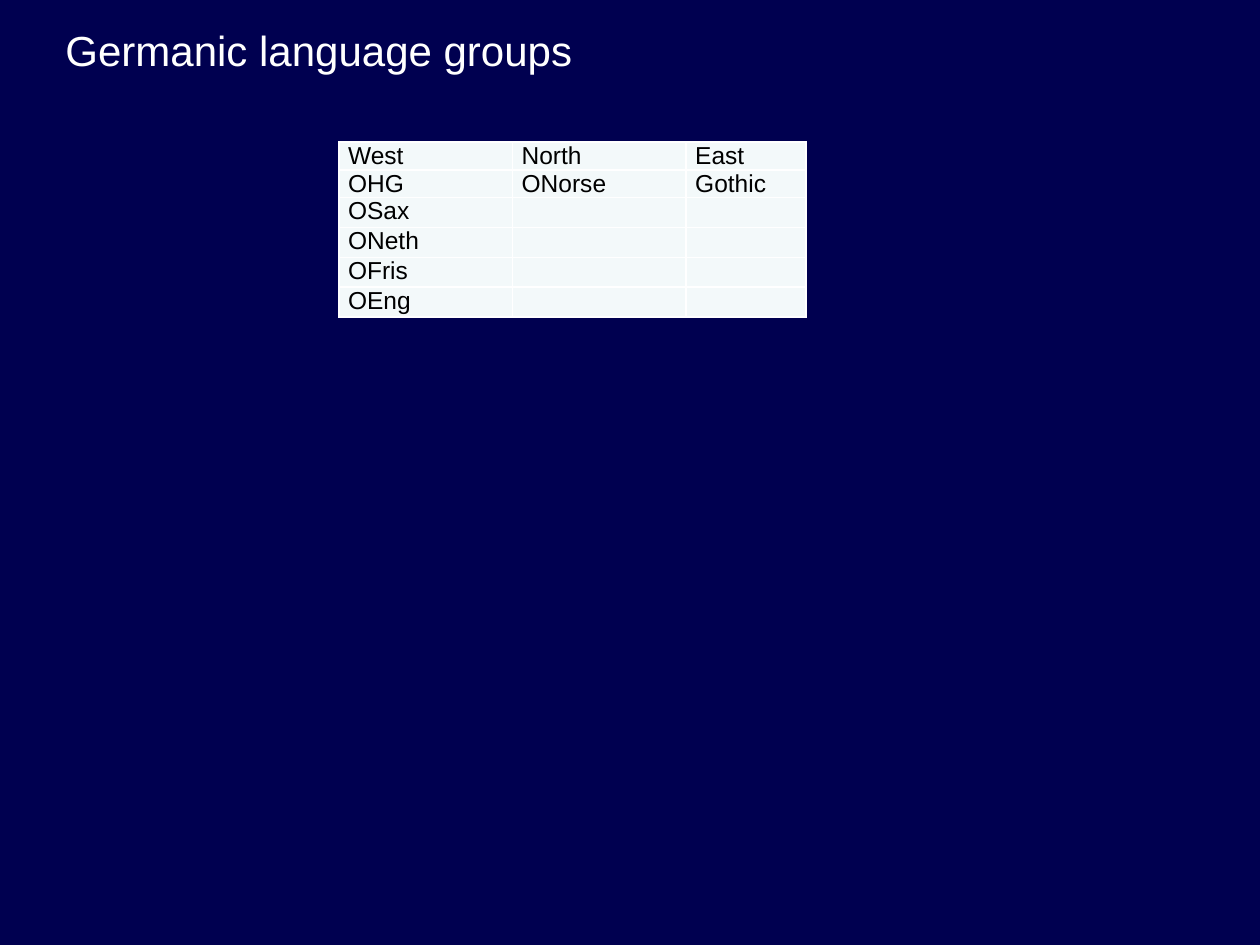
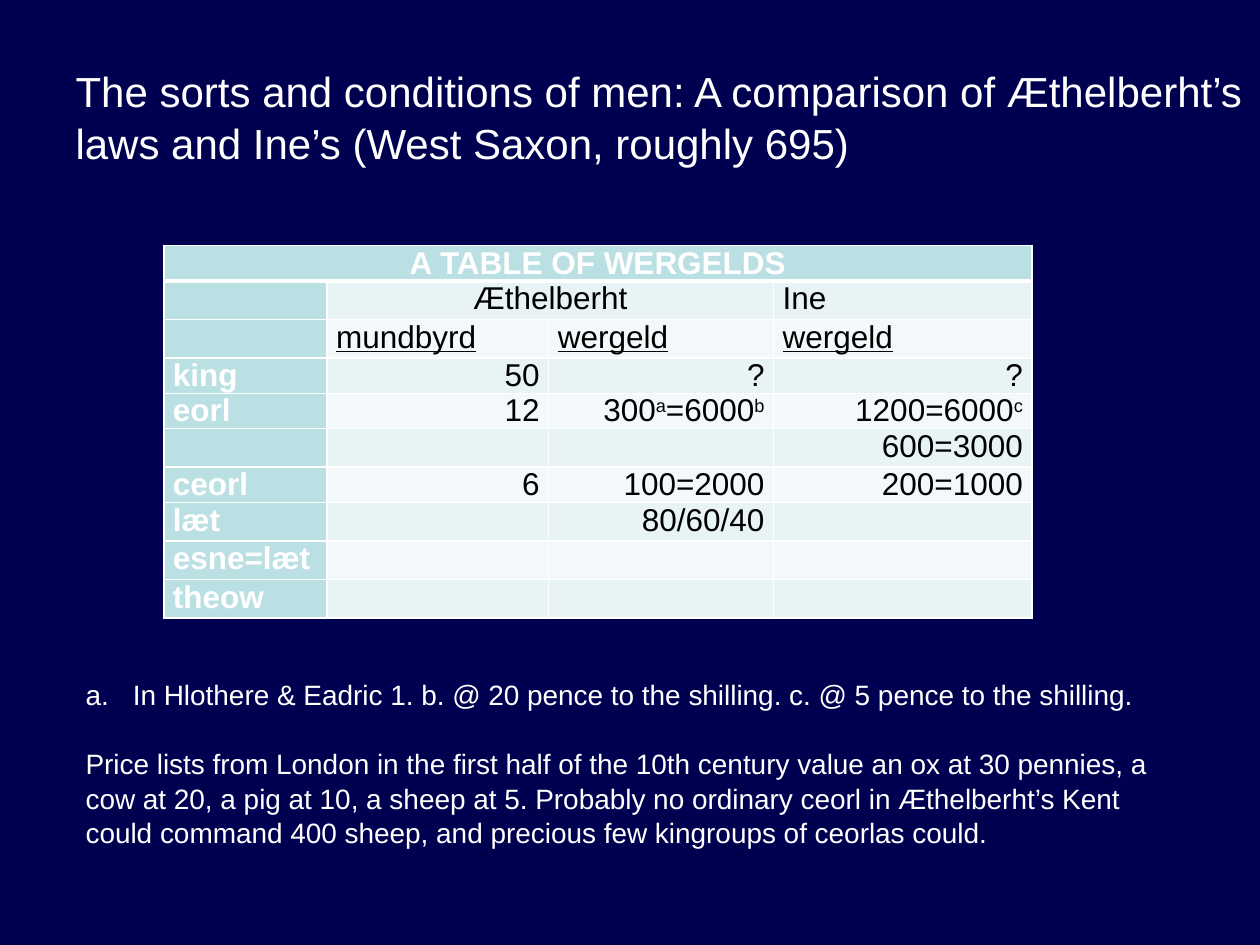
import pptx
import pptx.dml.color
import pptx.enum.text
import pptx.oxml.ns
import pptx.util
from lxml import etree

Pt = pptx.util.Pt
ALIGN = pptx.enum.text.PP_ALIGN

NAVY = "000050"
WHITE = "FFFFFF"
BLACK = "000000"
TEAL = "BBE0E3"
BAND = "E7F3F4"
PALE = "F3F9FA"
LINE_SPACING = 1.04

GROUPS = [
    ["West", "North", "East"],
    ["OHG", "ONorse", "Gothic"],
    ["OSax", "", ""],
    ["ONeth", "", ""],
    ["OFris", "", ""],
    ["OEng", "", ""],
]
WERGELDS = [
    ["A TABLE OF WERGELDS", "", "", ""],
    ["", "Æthelberht", "", "Ine"],
    ["", "mundbyrd", "wergeld", "wergeld"],
    ["king", "50", "?", "?"],
    ["eorl", "12", "300^a=6000^b", "1200=6000^c"],
    ["", "", "", "600=3000"],
    ["ceorl", "6", "100=2000", "200=1000"],
    ["læt", "", "80/60/40", ""],
    ["esne=læt", "", "", ""],
    ["theow", "", "", ""],
]


def rgb(value):
    return pptx.dml.color.RGBColor.from_string(value)


def write(p, text, size=16, color=WHITE, bold=False, underline=False,
          align=ALIGN.LEFT, before=0, after=0, spacing=1.0):
    p.alignment = align
    p.space_before, p.space_after = Pt(before), Pt(after)
    p.line_spacing = spacing
    if not text:
        p._p.get_or_add_endParaRPr().set("sz", str(size * 100))
        return

    def add_run(part, raised=False):
        if not part:
            return
        r = p.add_run()
        r.text = part
        r.font.name, r.font.size = "Arial", Pt(size)
        r.font.bold, r.font.underline = bold, underline
        r.font.color.rgb = rgb(color)
        if raised:
            r.font._element.set("baseline", "30000")

    plain, *marked = text.split("^")
    add_run(plain)
    for part in marked:
        add_run(part[0], raised=True)
        add_run(part[1:])


def set_border(cell, side, width):
    tc_pr = cell._tc.get_or_add_tcPr()
    ln = etree.SubElement(tc_pr, pptx.oxml.ns.qn("a:ln" + side), w=str(Pt(width)))
    fill = etree.SubElement(ln, pptx.oxml.ns.qn("a:solidFill"))
    etree.SubElement(fill, pptx.oxml.ns.qn("a:srgbClr"), val=WHITE)


def group_style(row, col):
    return PALE, {"color": BLACK}


def wergeld_style(row, col):
    if row == 0:
        return TEAL, {"bold": True, "align": ALIGN.CENTER}
    if col == 0:
        return TEAL, {"bold": True}
    align = ALIGN.RIGHT if row > 2 else ALIGN.LEFT
    if (row, col) == (1, 1):
        align = ALIGN.CENTER
    return (BAND if row % 2 else PALE), {
        "color": BLACK, "underline": row == 2, "align": align}


class Deck:
    """Holds the deck style and the slide being filled."""

    def __init__(self):
        self.prs = pptx.Presentation()
        self.prs.slide_width, self.prs.slide_height = Pt(720), Pt(540)
        fill = self.prs.slide_master.background.fill
        fill.solid()
        fill.fore_color.rgb = rgb(NAVY)
        self.s = None

    def titled_slide(self, title, box):
        self.s = self.prs.slides.add_slide(self.prs.slide_layouts[5])
        sp = self.s.shapes.title
        sp.left, sp.top, sp.width, sp.height = map(Pt, box)
        tf = sp.text_frame
        tf.word_wrap = True
        tf.auto_size = pptx.enum.text.MSO_AUTO_SIZE.NONE
        tf.vertical_anchor = pptx.enum.text.MSO_ANCHOR.TOP
        tf.margin_left = tf.margin_right = Pt(7.2)
        tf.margin_top, tf.margin_bottom = Pt(5), Pt(0)
        write(tf.paragraphs[0], title, size=24, spacing=LINE_SPACING)

    def table(self, rows, left, top, widths, row_height, size, style,
              merges=(), header_line=1):
        frame = self.s.shapes.add_table(
            len(rows), len(widths), Pt(left), Pt(top),
            Pt(sum(widths)), Pt(row_height * len(rows)))
        table = frame.table
        table.first_row = table.horz_banding = False
        for column, width in zip(table.columns, widths):
            column.width = Pt(width)
        for i, texts in enumerate(rows):
            table.rows[i].height = Pt(row_height)
            for j, text in enumerate(texts):
                cell = table.cell(i, j)
                cell.margin_left = cell.margin_right = Pt(5.2)
                cell.margin_top = cell.margin_bottom = Pt(0)
                for side in "LR":
                    set_border(cell, side, 1)
                set_border(cell, "T", header_line if i == 1 else 1)
                set_border(cell, "B", header_line if i == 0 else 1)
                color, look = style(i, j)
                cell.fill.solid()
                cell.fill.fore_color.rgb = rgb(color)
                write(cell.text_frame.paragraphs[0], text, size=size, after=5, **look)
        for row, first, last in merges:
            table.cell(row, first).merge(table.cell(row, last))

    def caption(self, numbered, body, box):
        tf = self.s.shapes.add_textbox(*map(Pt, box)).text_frame
        tf.word_wrap = True
        p = tf.paragraphs[0]
        write(p, numbered, spacing=LINE_SPACING)
        p_pr = p._p.get_or_add_pPr()
        p_pr.set("marL", str(Pt(27)))
        p_pr.set("indent", str(Pt(-27)))
        etree.SubElement(p_pr, pptx.oxml.ns.qn("a:buAutoNum"), type="alphaLcPeriod")
        write(tf.add_paragraph(), body, before=19.1, spacing=LINE_SPACING)


def main():
    deck = Deck()
    deck.titled_slide("Germanic language groups", (30.2, 8, 648, 30.2))
    deck.table(GROUPS, 193.7, 81.2, (99.2, 99.2, 68.4), 15.85, 14, group_style)

    deck.titled_slide(
        "The sorts and conditions of men: A comparison of Æthelberht’s laws "
        "and Ine’s (West Saxon, roughly 695)", (36, 31, 684, 78.5))
    deck.table(WERGELDS, 93.6, 140.4, (93.3, 126.7, 128.5, 147.6), 20.2, 18,
               wergeld_style, merges=[(0, 0, 3), (1, 1, 2)], header_line=3)
    deck.caption(
        "In Hlothere & Eadric 1. b. @ 20 pence to the shilling. "
        "c. @ 5 pence to the shilling.",
        "Price lists from London in the first half of the 10th century value an ox "
        "at 30 pennies, a cow at 20, a pig at 10, a sheep at 5. Probably no ordinary "
        "ceorl in Æthelberht’s Kent could command 400 sheep, and precious few "
        "kingroups of ceorlas could.", (41.8, 383, 632.9, 104.4))
    deck.prs.save("out.pptx")


if __name__ == "__main__":
    main()
